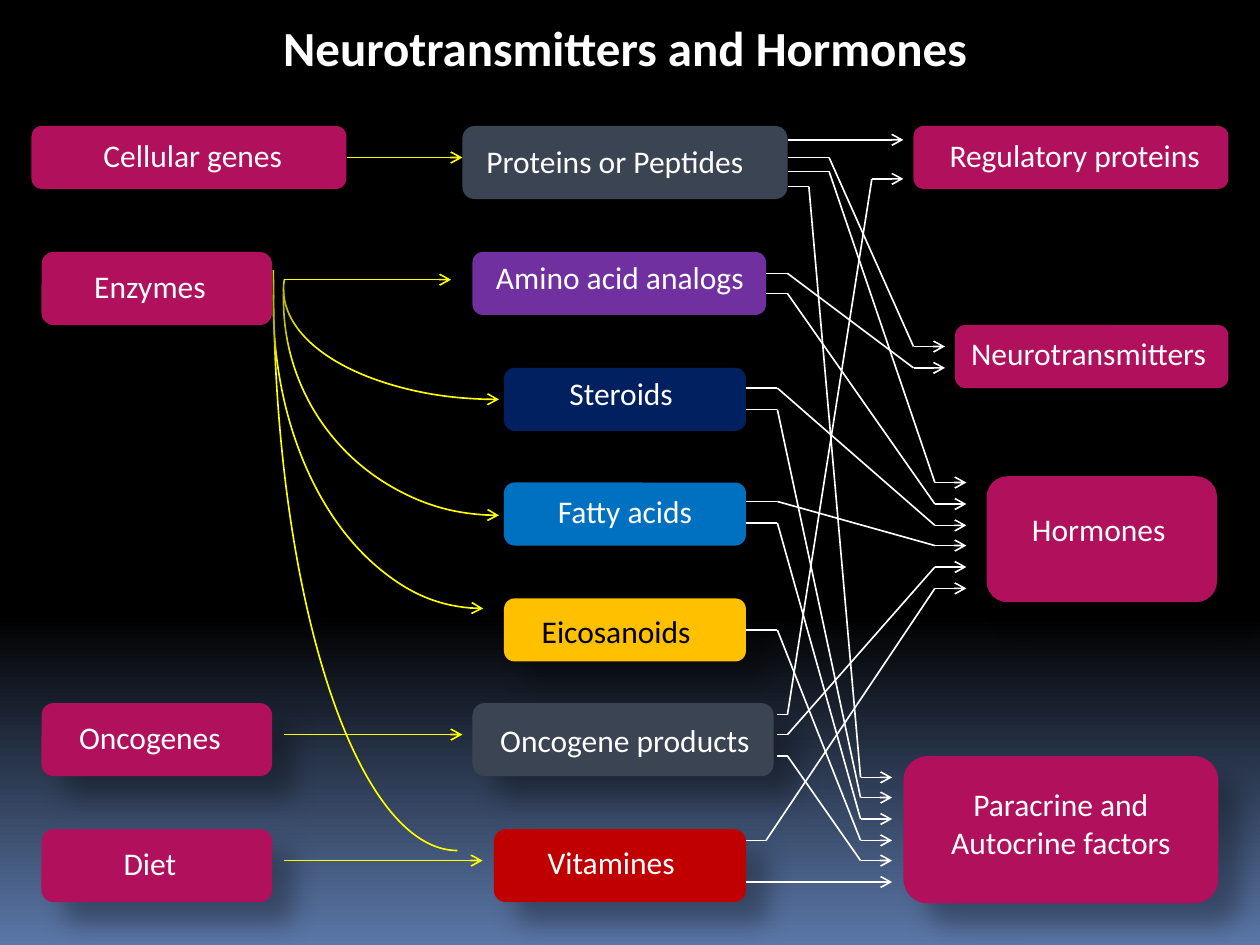
from lxml.etree import SubElement
from pptx import Presentation
from pptx.dml.color import RGBColor
from pptx.enum.shapes import MSO_CONNECTOR as Connector, MSO_SHAPE as Shape
from pptx.enum.text import MSO_ANCHOR as Anchor, MSO_AUTO_SIZE as AutoSize, PP_ALIGN as Align
from pptx.oxml.ns import qn
from pptx.util import Inches, Pt

WHITE, BLACK, YELLOW = "FFFFFF", "000000", "FFFF00"
MAGENTA, SLATE = "B0105C", "3B4453"
FONT = "Calibri"
LABEL_WIDTH, LABEL_HEIGHT = 2.42, 0.4
RIGHT_SIDE = 3

TITLE = "Neurotransmitters and Hormones"

# label: (left, top, width, height), fill, (label centre, label top)
BOXES = {
    "Cellular genes": ((0.25, 1, 2.5, 0.5), MAGENTA, (1.53, 1.03)),
    "Enzymes": ((0.33, 2, 1.83, 0.58), MAGENTA, (1.19, 2.07)),
    "Oncogenes": ((0.33, 5.58, 1.83, 0.58), MAGENTA, (1.19, 5.65)),
    "Diet": ((0.33, 6.58, 1.83, 0.58), MAGENTA, (1.19, 6.65)),
    "Proteins or Peptides": ((3.67, 1, 2.58, 0.58), SLATE, (4.88, 1.08)),
    "Amino acid analogs": ((3.75, 2, 2.33, 0.5), "7030A0", (4.92, 2)),
    "Steroids": ((4, 2.92, 1.92, 0.5), "002060", (4.93, 2.92)),
    "Fatty acids": ((4, 3.83, 1.92, 0.5), "0070C0", (4.96, 3.86)),
    "Eicosanoids": ((4, 4.75, 1.92, 0.5), "FFC000", (4.89, 4.81)),
    "Oncogene products": ((3.75, 5.58, 2.39, 0.58), SLATE, (4.96, 5.67)),
    "Vitamines": ((3.92, 6.58, 2, 0.58), "C00000", (4.85, 6.64)),
    "Regulatory proteins": ((7.25, 1, 2.5, 0.5), MAGENTA, (8.53, 1.03)),
    "Neurotransmitters": ((7.58, 2.58, 2.17, 0.5), MAGENTA, (8.64, 2.6)),
    "Hormones": ((7.83, 3.78, 1.83, 1), MAGENTA, (8.72, 4)),
    "Paracrine and\nAutocrine factors": ((7.17, 6, 2.5, 1.17), MAGENTA, (8.42, 6.18)),
}

# source, from x, to x, y
SOURCE_ARROWS = [
    ("Cellular genes", 2.75, 3.67, 1.25),
    ("Enzymes", 2.25, 3.58, 2.22),
    ("Oncogenes", 2.25, 3.67, 5.83),
    ("Diet", 2.25, 3.83, 6.83),
]

# (left, top, width, height) of the whole ellipse, arrow
ENZYME_ARCS = [
    ((2.17, 0, 3.33, 4.83), True),
    ((2.17, -2.33, 2.92, 9.08), False),
    ((2.25, 1.42, 3.42, 1.75), True),
    ((2.25, 0.67, 3.42, 3.42), True),
]

# where the last, level piece of a route starts
REGULATORY, NEURO, HORMONES, PARACRINE = 6.92, 7.25, 7.42, 6.83
ARROW_LENGTH = 0.25

# source, start x, bend x, [(start y, target x, target y)]
ROUTES = [
    ("Proteins or Peptides", 6.25, 6.58,
     [(1.25, NEURO, 2.75), (1.36, HORMONES, 3.83)]),
    ("Proteins or Peptides", 6.25, 6.42, [(1.48, PARACRINE, 6.17)]),
    ("Amino acid analogs", 6.08, 6.25,
     [(2.17, NEURO, 2.92), (2.33, HORMONES, 4)]),
    ("Steroids", 5.92, 6.17, [(3.08, HORMONES, 4.17), (3.25, PARACRINE, 6.33)]),
    ("Fatty acids", 5.92, 6.17, [(3.98, HORMONES, 4.33), (4.15, PARACRINE, 6.5)]),
    ("Eicosanoids", 5.92, 6.17, [(5, PARACRINE, 6.67)]),
    ("Oncogene products", 6.17, 6.25,
     [(5.67, REGULATORY, 1.42), (5.83, HORMONES, 4.5), (6, PARACRINE, 6.83)]),
    ("Vitamines", 5.92, 6.08, [(6.67, HORMONES, 4.67)]),
]
STRAIGHT_ROUTES = [
    ("Proteins or Peptides", 6.25, 7.17, 1.11),
    ("Vitamines", 5.92, 7.08, 7),
]


def rgb(colour):
    return RGBColor.from_string(colour)


def style_line(shape, colour, arrow_end=None):
    """Set the thin line; arrow_end is "headEnd" or "tailEnd"."""
    shape.line.color.rgb = rgb(colour)
    shape.line.width = Pt(0.94)
    if arrow_end:
        line = shape.element.spPr.find(qn("a:ln"))
        SubElement(line, qn(f"a:{arrow_end}"), type="arrow")


def add_shadow(shape):
    effects = SubElement(shape.element.spPr, qn("a:effectLst"))
    shadow = SubElement(effects, qn("a:outerShdw"), blurRad=str(Pt(15)),
                        dist=str(Pt(18)), dir="2700000", algn="tl", rotWithShape="0")
    colour = SubElement(shadow, qn("a:srgbClr"), val=BLACK)
    SubElement(colour, qn("a:alpha"), val="30000")


def write(frame, text, size, colour, bold=False):
    frame.word_wrap = True
    frame.text = text
    for paragraph in frame.paragraphs:
        paragraph.alignment = Align.CENTER
        font = paragraph.font
        font.name, font.size, font.bold = FONT, Pt(size), bold
        font.color.rgb = rgb(colour)


def add_box(shapes, place, fill):
    box = shapes.add_shape(Shape.ROUNDED_RECTANGLE, *map(Inches, place))
    box.fill.solid()
    box.fill.fore_color.rgb = rgb(fill)
    box.line.fill.background()
    add_shadow(box)
    return box


def add_label(shapes, text, centre, top):
    label = shapes.add_textbox(Inches(centre - LABEL_WIDTH / 2), Inches(top),
                               Inches(LABEL_WIDTH), Inches(LABEL_HEIGHT))
    label.text_frame.auto_size = AutoSize.SHAPE_TO_FIT_TEXT
    write(label.text_frame, text, 18, BLACK if text == "Eicosanoids" else WHITE)


def add_arc(shapes, place, arrow):
    arc = shapes.add_shape(Shape.ARC, *map(Inches, place))
    arc.adjustments[0], arc.adjustments[1] = 54, 109.54
    arc.fill.background()
    style_line(arc, YELLOW, "headEnd" if arrow else None)
    arc.shadow.inherit = False


def add_route(shapes, points, colour, source):
    """Draw straight pieces through the points, with an arrow on the last."""
    pieces = list(zip(points, points[1:]))
    for number, (start, end) in enumerate(pieces, 1):
        piece = shapes.add_connector(Connector.STRAIGHT, *map(Inches, start + end))
        style_line(piece, colour, "tailEnd" if number == len(pieces) else None)
        SubElement(piece.element.spPr, qn("a:effectLst"))
        if number == 1 and Inches(start[1]) == source.top + source.height // 2:
            piece.begin_connect(source, RIGHT_SIDE)


def main():
    deck = Presentation()
    deck.slide_width, deck.slide_height = Inches(10), Inches(7.5)
    slide = deck.slides.add_slide(deck.slide_layouts[5])
    shapes = slide.shapes

    background = slide.background.fill
    background.gradient()
    background.gradient_angle = 270
    for stop, position, colour in zip(background.gradient_stops, (0.65, 1), (BLACK, "5B77A8")):
        stop.position, stop.color.rgb = position, rgb(colour)

    title = shapes.title
    title.left, title.top, title.width, title.height = map(Inches, (0.67, 0.09, 8.58, 0.57))
    title.text_frame.auto_size = AutoSize.NONE
    title.text_frame.vertical_anchor = Anchor.TOP
    write(title.text_frame, TITLE, 28, WHITE, bold=True)

    for place, arrow in ENZYME_ARCS:
        add_arc(shapes, place, arrow)

    boxes = {text: add_box(shapes, place, fill) for text, (place, fill, _) in BOXES.items()}
    for text, (_, _, (centre, top)) in BOXES.items():
        add_label(shapes, text, centre, top)

    for arrows, colour in ((SOURCE_ARROWS, YELLOW), (STRAIGHT_ROUTES, WHITE)):
        for source, left, right, y in arrows:
            add_route(shapes, [(left, y), (right, y)], colour, boxes[source])
    for source, start, bend, targets in ROUTES:
        for y, target, target_y in targets:
            points = [(start, y), (bend, y), (target, target_y),
                      (target + ARROW_LENGTH, target_y)]
            add_route(shapes, points, WHITE, boxes[source])

    deck.save("out.pptx")


if __name__ == "__main__":
    main()
